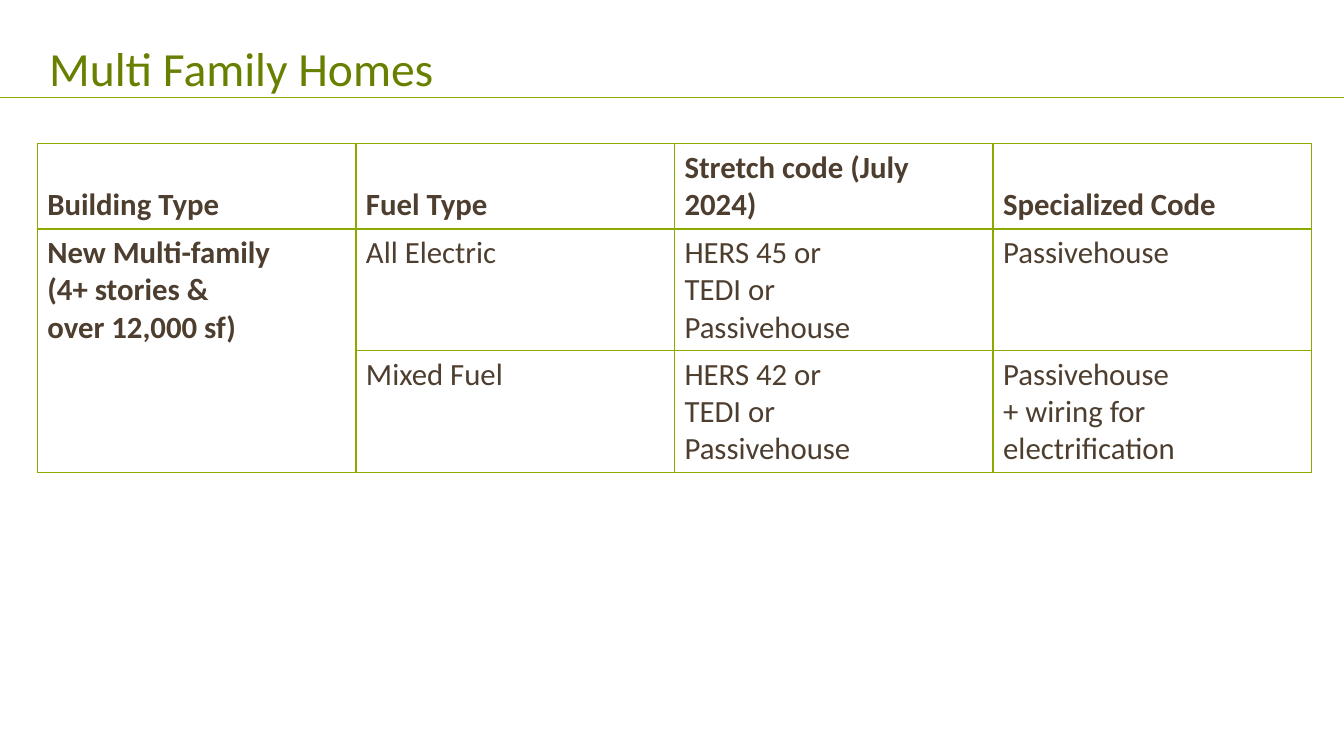
from lxml import etree
from pptx import Presentation
from pptx.dml.color import RGBColor
from pptx.enum.shapes import MSO_CONNECTOR
from pptx.enum.text import MSO_ANCHOR
from pptx.oxml.ns import qn
from pptx.util import Inches, Pt

STRAIGHT = MSO_CONNECTOR.STRAIGHT
TOP, BOTTOM = MSO_ANCHOR.TOP, MSO_ANCHOR.BOTTOM
LIME = RGBColor(0x8B, 0xAA, 0x00)
GREEN = RGBColor(0x68, 0x80, 0x00)
BROWN = RGBColor(0x4D, 0x3E, 0x2F)
FONT = "Calibri"

ROWS = [
    ["Building Type", "Fuel Type", "Stretch code (July 2024)", "Specialized Code"],
    ["New Multi-family\n(4+ stories &\nover 12,000 sf)", "All Electric",
     "HERS 45 or\nTEDI or\nPassivehouse", "Passivehouse"],
    ["", "Mixed Fuel", "HERS 42 or\nTEDI or\nPassivehouse",
     "Passivehouse\n+ wiring for electrification"],
]
ROW_HEIGHTS = [0.85, 1.21, 1.21]
COLUMN_WIDTH = 3.16


def style_text(frame, size, color, bold=False):
    for para in frame.paragraphs:
        para.font.size = Pt(size)
        for span in para.runs:
            span.font.name = FONT
            span.font.size = Pt(size)
            span.font.bold = bold
            span.font.color.rgb = color


def add_border(cell, side, width):
    properties = cell._tc.get_or_add_tcPr()
    border = etree.SubElement(properties, qn(f"a:ln{side}"), w=str(Pt(width)))
    fill = etree.SubElement(border, qn("a:solidFill"))
    etree.SubElement(fill, qn("a:srgbClr"), val=str(LIME))


deck = Presentation()
deck.slide_width = Inches(13.33)
deck.slide_height = Inches(7.5)
page = deck.slides.add_slide(deck.slide_layouts[6])

rule = page.shapes.add_connector(
    STRAIGHT, Inches(0), Inches(0.97), Inches(13.33), Inches(0.97))
rule.line.color.rgb = LIME
rule.line.width = Pt(1)
etree.SubElement(rule._element.spPr, qn("a:effectLst"))

title_box = page.shapes.add_textbox(
    Inches(0.39), Inches(0.01), Inches(12.6), Inches(0.96))
title = title_box.text_frame
title.word_wrap = True
title.vertical_anchor = BOTTOM
title.margin_bottom = Inches(0.02)
title.text = "Multi Family Homes"
style_text(title, 34, GREEN)

table = page.shapes.add_table(
    len(ROWS), len(ROWS[0]), Inches(0.37), Inches(1.42),
    Inches(COLUMN_WIDTH * len(ROWS[0])), Inches(sum(ROW_HEIGHTS))).table
table.horz_banding = False
for column in table.columns:
    column.width = Inches(COLUMN_WIDTH)

for row_index, labels in enumerate(ROWS):
    table.rows[row_index].height = Inches(ROW_HEIGHTS[row_index])
    is_header = row_index == 0
    for column_index, label in enumerate(labels):
        cell = table.cell(row_index, column_index)
        cell.text_frame.text = label
        cell.vertical_anchor = BOTTOM if is_header else TOP
        style_text(cell.text_frame, 22, BROWN, is_header or column_index == 0)
        for side in "LRTB":
            header_edge = (row_index, side) in [(0, "B"), (1, "T")]
            add_border(cell, side, 2 if header_edge else 1)
        cell.fill.background()

table.cell(1, 0).merge(table.cell(2, 0))

deck.save("out.pptx")
